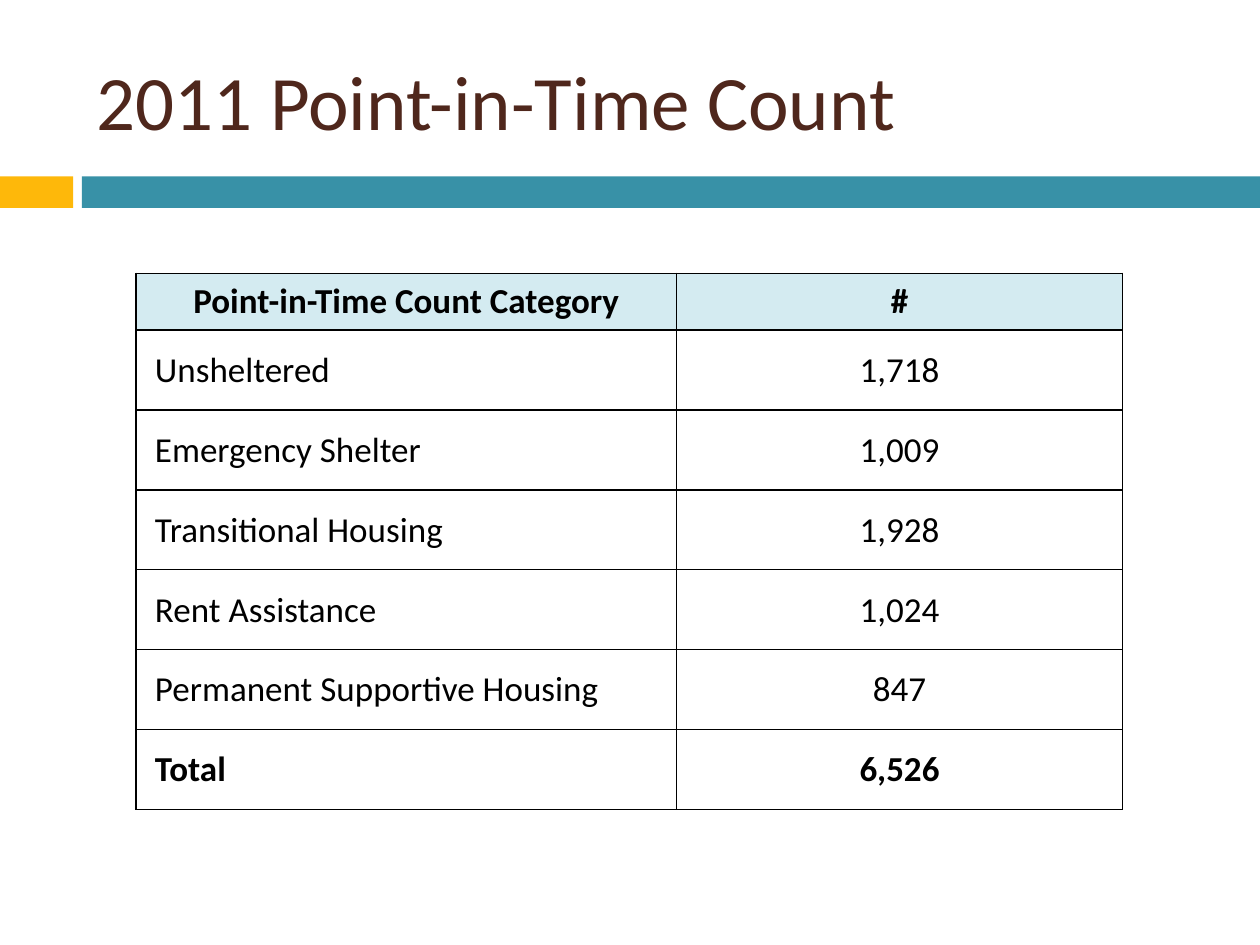
from dataclasses import dataclass

from lxml.etree import SubElement
from pptx import Presentation
from pptx.dml.color import RGBColor
from pptx.enum.shapes import MSO_SHAPE as Shape
from pptx.enum.text import MSO_ANCHOR as Anchor, PP_ALIGN as Align
from pptx.oxml.ns import qn
from pptx.util import Inches, Pt


@dataclass(frozen=True)
class Theme:
    font: str = "Calibri"
    title_size: int = 44
    table_size: int = 20
    title: str = "4F271C"
    accent: str = "FEB80A"
    band: str = "3891A7"
    header: str = "D4EBF1"
    ink: str = "000000"
    border: float = 1


def write(frame, text, *, font, size, color, bold=False, align=Align.LEFT, space=0):
    para = frame.paragraphs[0]
    para.alignment = align
    para.space_before = para.space_after = Pt(space)
    span = para.add_run()
    span.text = text
    span.font.name = font
    span.font.size = Pt(size)
    span.font.bold = bold
    span.font.color.rgb = RGBColor.from_string(color)


class SlideBuilder:
    def __init__(self, page, theme):
        self.page = page
        self.theme = theme

    def bar(self, left, top, width, height, color):
        box = self.page.shapes.add_shape(
            Shape.RECTANGLE, Inches(left), Inches(top), Inches(width), Inches(height))
        box.shadow.inherit = False
        box.fill.solid()
        box.fill.fore_color.rgb = RGBColor.from_string(color)
        box.line.fill.background()

    def title(self, text, left, top, width, height):
        box = self.page.shapes.add_textbox(
            Inches(left), Inches(top), Inches(width), Inches(height))
        frame = box.text_frame
        frame.word_wrap = True
        frame.vertical_anchor = Anchor.MIDDLE
        write(frame, text, font=self.theme.font, size=self.theme.title_size,
              color=self.theme.title)

    def table(self, rows, left, top, widths, heights):
        table = self.page.shapes.add_table(
            len(rows), len(widths), Inches(left), Inches(top),
            Inches(sum(widths)), Inches(sum(heights))).table
        table.first_row = table.horz_banding = False
        for column, width in zip(table.columns, widths):
            column.width = Inches(width)
        for line, height in zip(table.rows, heights):
            line.height = Inches(height)
        for row, values in enumerate(rows):
            for column, text in enumerate(values):
                self.cell(table.cell(row, column), text, header=row == 0,
                          bold=row in (0, len(rows) - 1),
                          centred=row == 0 or column > 0)

    def cell(self, cell, text, header, bold, centred):
        inset = Inches(0.05 if header else 0.15)
        cell.margin_left = cell.margin_right = inset
        cell.margin_top = cell.margin_bottom = inset
        write(cell.text_frame, text, font=self.theme.font, size=self.theme.table_size,
              color=self.theme.ink, bold=bold, space=12,
              align=Align.CENTER if centred else Align.LEFT)
        # Borders come before the fill in the cell properties
        properties = cell._tc.get_or_add_tcPr()
        for side in ("a:lnL", "a:lnR", "a:lnT", "a:lnB"):
            line = SubElement(properties, qn(side), w=str(Pt(self.theme.border)))
            solid = SubElement(line, qn("a:solidFill"))
            SubElement(solid, qn("a:srgbClr"), val=self.theme.ink)
        if header:
            cell.fill.solid()
            cell.fill.fore_color.rgb = RGBColor.from_string(self.theme.header)
        else:
            cell.fill.background()


def main():
    deck = Presentation()
    deck.slide_width, deck.slide_height = Inches(10), Inches(7.5)
    theme = Theme()
    builder = SlideBuilder(deck.slides.add_slide(deck.slide_layouts[6]), theme)

    # Title and the two-colour band below it
    builder.bar(0, 1.4, 0.58, 0.25, theme.accent)
    builder.bar(0.65, 1.4, 9.35, 0.25, theme.band)
    builder.title("2011 Point-in-Time Count", 0.67, 0.25, 8.92, 1.08)

    # Count by category
    counts = [
        ("Point-in-Time Count Category", "#"),
        ("Unsheltered", "1,718"),
        ("Emergency Shelter", "1,009"),
        ("Transitional Housing", "1,928"),
        ("Rent Assistance", "1,024"),
        ("Permanent Supportive Housing", "847"),
        ("Total", "6,526"),
    ]
    heights = [0.45] + [0.62] * (len(counts) - 1)
    builder.table(counts, 1.08, 2.17, [4.29, 3.54], heights)

    deck.save("out.pptx")


if __name__ == "__main__":
    main()
